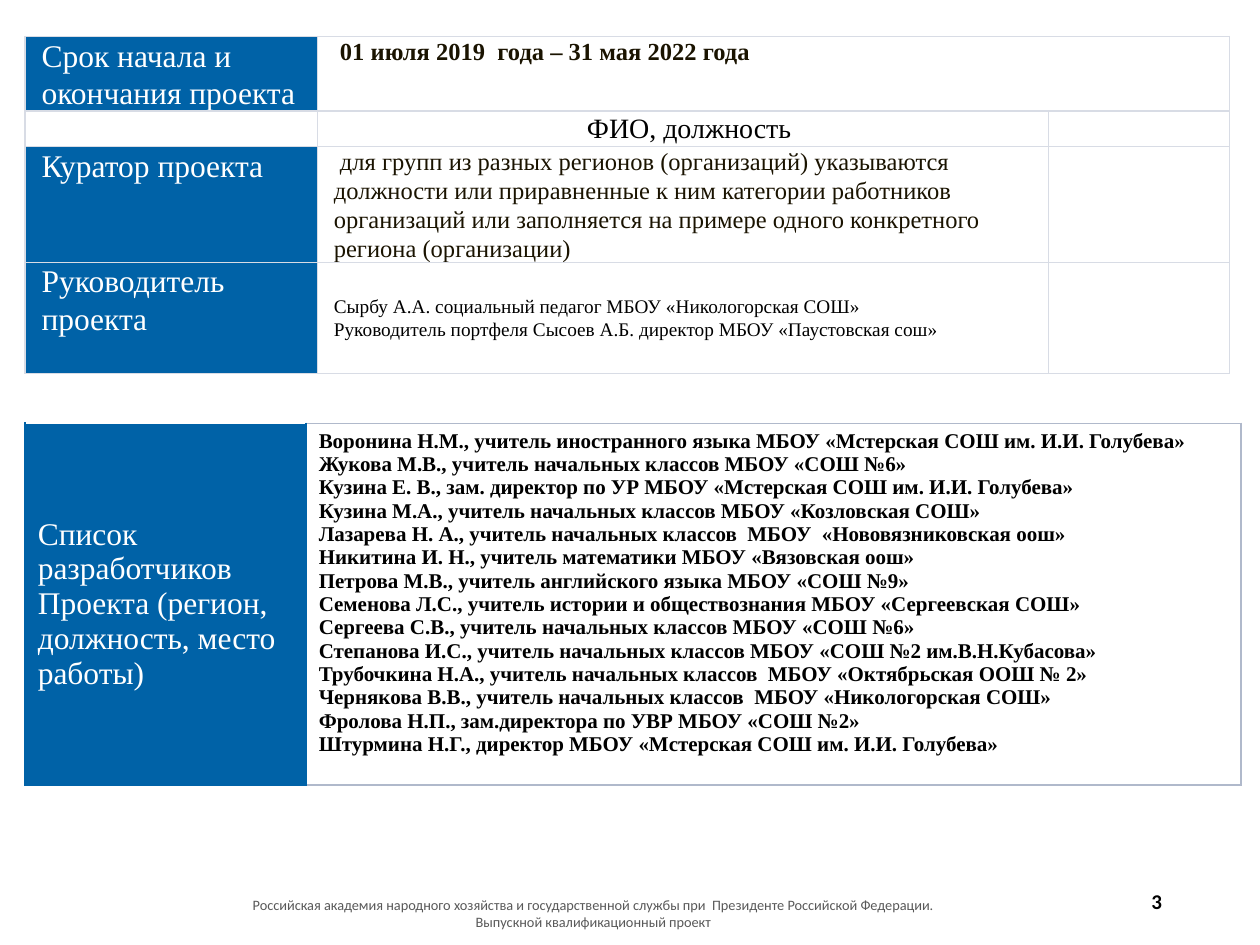
from pptx import Presentation
from pptx.dml.color import RGBColor
from pptx.enum.text import MSO_ANCHOR, PP_ALIGN
from pptx.oxml.ns import qn
from pptx.util import Inches, Pt
from lxml.etree import SubElement, Element

T = dict(
    serif="Times New Roman", sans="Calibri",
    blue="0062A7", white="FFFFFF", black="000000", dark="1A1300",
    grey="595959", grid="D8DCE5", frame="B0B9CB",
    label=18, head=16, body=14, people=12, small=11, page=12, foot=8.2,
)

prs = Presentation()
prs.slide_width, prs.slide_height = Inches(10), Inches(7.5)
s = prs.slides.add_slide(prs.slide_layouts[6])
U = prs.slide_width / 100


def write(tf, lines, font, size, color, bold=False, align=PP_ALIGN.LEFT, indent=0, spacing=None):
    tf.word_wrap = True
    for i, line in enumerate(lines):
        p = tf.paragraphs[0] if i == 0 else tf.add_paragraph()
        p.alignment, p.line_spacing = align, spacing
        pPr = p._p.get_or_add_pPr()
        pPr.set("marL", str(int(indent * U)))
        pPr.set("indent", "0")
        if not line:
            SubElement(p._p, qn("a:endParaRPr")).set("sz", str(size * 100))
            continue
        r = p.add_run()
        r.text = line
        r.font.name, r.font.size, r.font.bold = T[font], Pt(T.get(size, size)), bold
        r.font.color.rgb = RGBColor.from_string(T[color])


def paint(cell, fill, borders):
    cell.fill.solid()
    cell.fill.fore_color.rgb = RGBColor.from_string(T[fill])
    for i, (side, (color, width)) in enumerate(zip("LRTB", borders)):
        ln = Element(qn("a:ln" + side), w=str(Pt(width)))
        SubElement(SubElement(ln, qn("a:solidFill")), qn("a:srgbClr")).set("val", T[color])
        cell._tc.get_or_add_tcPr().insert(i, ln)


LEFT = 2
cols, rows = [23.2, 58, 14.4], [5.9, 2.8, 9.2, 8.8]
facts = [
    ("Срок начала и окончания проекта", [" 01 июля 2019  года – 31 мая 2022 года"],
     dict(size="body", color="dark", bold=True)),
    ("", ["ФИО, должность"], dict(size="head", color="black", align=PP_ALIGN.CENTER)),
    ("Куратор проекта",
     [" для групп из разных регионов (организаций) указываются должности или приравненные к ним "
      "категории работников организаций или заполняется на примере одного конкретного региона (организации)"],
     dict(size="body", color="dark")),
    ("Руководитель проекта",
     ["Сырбу А.А. социальный педагог МБОУ «Никологорская СОШ»",
      "Руководитель портфеля Сысоев А.Б. директор МБОУ «Паустовская сош»"],
     dict(size="small", color="black")),
]
tbl = s.shapes.add_table(len(rows), len(cols), int(LEFT * U), int(2.9 * U),
                         int(sum(cols) * U), int(sum(rows) * U)).table
for col, w in zip(tbl.columns, cols):
    col.width = int(w * U)
for i, (h, (label, lines, look)) in enumerate(zip(rows, facts)):
    tbl.rows[i].height = int(h * U)
    for j in range(len(cols)):
        cell = tbl.cell(i, j)
        cell.margin_left = cell.margin_right = int(0.3 * U)
        cell.margin_top = cell.margin_bottom = 0
        paint(cell, "blue" if j == 0 and label else "white", [("grid", 1)] * 4)
    write(tbl.cell(i, 0).text_frame, [label], "serif", T["label"] if label else T["small"],
          "white", indent=1, spacing=1.07)
    write(tbl.cell(i, 1).text_frame, lines, "serif", indent=1, spacing=1.07, **look)
    write(tbl.cell(i, 2).text_frame, [""], "serif", T["small"], "black")
tbl.cell(0, 1).merge(tbl.cell(0, 2))
tbl.cell(3, 1).vertical_anchor = MSO_ANCHOR.MIDDLE

people = [
    "Воронина Н.М., учитель иностранного языка МБОУ «Мстерская СОШ им. И.И. Голубева»",
    "Жукова М.В., учитель начальных классов МБОУ «СОШ №6»",
    "Кузина Е. В., зам. директор по УР МБОУ «Мстерская СОШ им. И.И. Голубева»",
    "Кузина М.А., учитель начальных классов МБОУ «Козловская СОШ»",
    "Лазарева Н. А., учитель начальных классов  МБОУ  «Нововязниковская оош»",
    "Никитина И. Н., учитель математики МБОУ «Вязовская оош»",
    "Петрова М.В., учитель английского языка МБОУ «СОШ №9»",
    "Семенова Л.С., учитель истории и обществознания МБОУ «Сергеевская СОШ»",
    "Сергеева С.В., учитель начальных классов МБОУ «СОШ №6»",
    "Степанова И.С., учитель начальных классов МБОУ «СОШ №2 им.В.Н.Кубасова»",
    "Трубочкина Н.А., учитель начальных классов  МБОУ «Октябрьская ООШ № 2»",
    "Чернякова В.В., учитель начальных классов  МБОУ «Никологорская СОШ»",
    "Фролова Н.П., зам.директора по УВР МБОУ «СОШ №2»",
    "Штурмина Н.Г., директор МБОУ «Мстерская СОШ им. И.И. Голубева»",
]
cols = [22.3, 74.2]
tbl = s.shapes.add_table(1, 2, int(LEFT * U), int(33.6 * U), int(sum(cols) * U), int(28.7 * U)).table
for col, w in zip(tbl.columns, cols):
    col.width = int(w * U)
label, names = tbl.cell(0, 0), tbl.cell(0, 1)
label.vertical_anchor = MSO_ANCHOR.MIDDLE
paint(label, "blue", [("blue", 1.5), ("blue", 1), ("white", 1.5), ("blue", 1.5)])
paint(names, "white", [("blue", 1)] + [("frame", 1)] * 3)
write(label.text_frame, ["Список разработчиков", "Проекта (регион, должность, место работы)"],
      "serif", "label", "white")
write(names.text_frame, people, "serif", "people", "black", bold=True)

footer = ["Российская академия народного хозяйства и государственной службы при  Президенте Российской Федерации.",
          "Выпускной квалификационный проект"]
for x, y, w, lines, look in [
    (9, 70.5, 75.6, footer, dict(size="foot", color="grey", align=PP_ALIGN.CENTER, indent=0.6)),
    (70.7, 69.5, 22.5, ["3"], dict(size="page", color="black", bold=True, align=PP_ALIGN.RIGHT)),
]:
    tf = s.shapes.add_textbox(int(x * U), int(y * U), int(w * U), int(4 * U)).text_frame
    tf.vertical_anchor = MSO_ANCHOR.MIDDLE
    write(tf, lines, "sans", **look)

prs.save("out.pptx")
